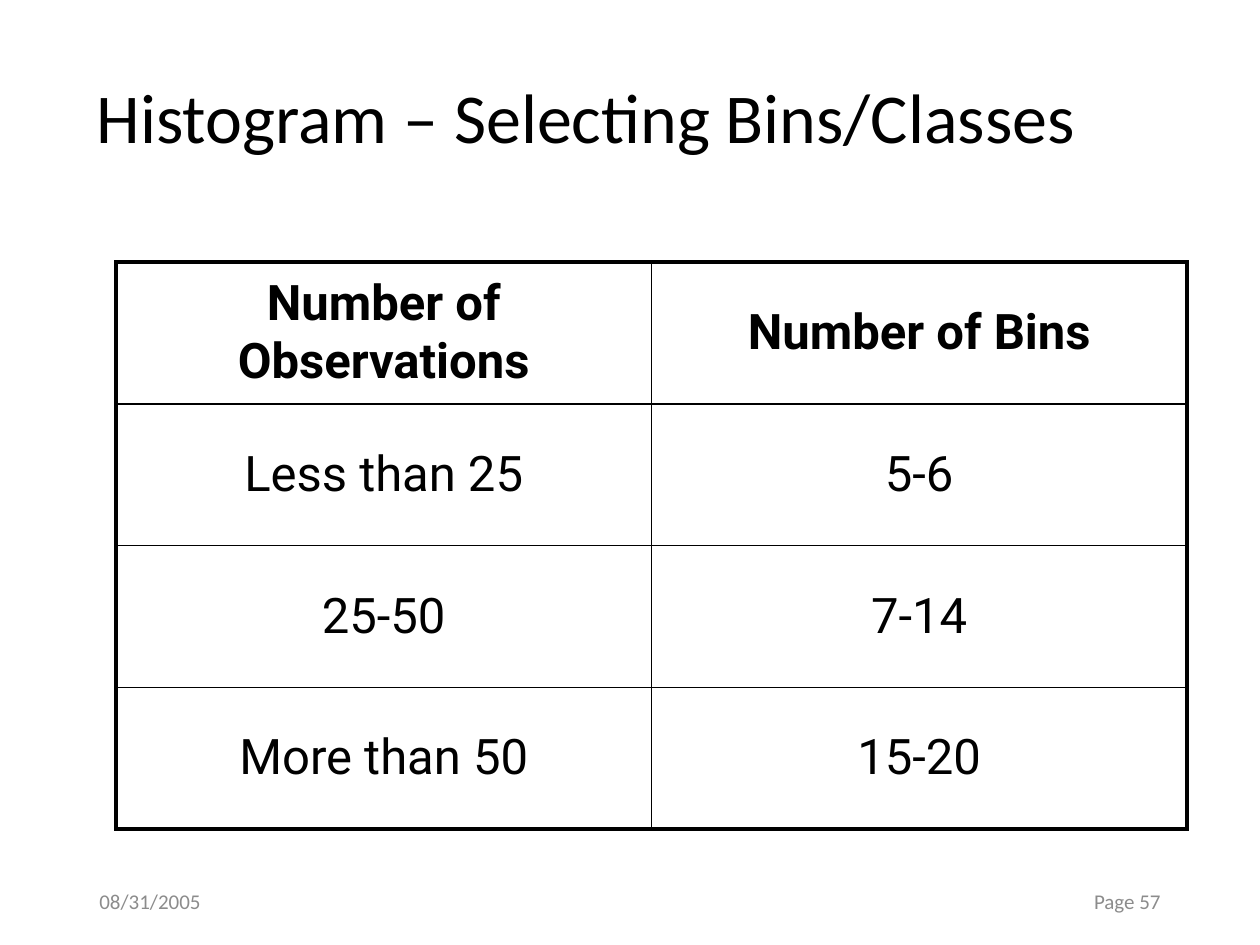
import pptx
import pptx.dml.color
import pptx.enum.text
import pptx.oxml.ns
import pptx.util
from lxml import etree

Inches = pptx.util.Inches
Pt = pptx.util.Pt
RGBColor = pptx.dml.color.RGBColor
PP_ALIGN = pptx.enum.text.PP_ALIGN
MIDDLE = pptx.enum.text.MSO_ANCHOR.MIDDLE
qn = pptx.oxml.ns.qn

BLACK = RGBColor(0x00, 0x00, 0x00)
WHITE = RGBColor(0xFF, 0xFF, 0xFF)
GRAY = RGBColor(0x8C, 0x8C, 0x8C)

TITLE = "Histogram – Selecting Bins/Classes"
DATE = "08/31/2005"
PAGE = "Page 57"
BIN_ROWS = [
    ("Number of Observations", "Number of Bins"),
    ("Less than 25", "5-6"),
    ("25-50", "7-14"),
    ("More than 50", "15-20"),
]
TABLE_BOX = (0.92, 2.08, 8.5, 4.5)
OUTER_LINE, INNER_LINE = 2.25, 1


def add_run(paragraph, text, size, font_name, color, bold=False):
    run = paragraph.add_run()
    run.text = text
    run.font.size = Pt(size)
    run.font.name = font_name
    run.font.color.rgb = color
    run.font.bold = bold


def add_label(slide, text, box, size, color, align=PP_ALIGN.LEFT, line_spacing=1.0):
    frame = slide.shapes.add_textbox(*map(Inches, box)).text_frame
    frame.word_wrap = True
    frame.vertical_anchor = MIDDLE
    paragraph = frame.paragraphs[0]
    paragraph.alignment = align
    paragraph.line_spacing = line_spacing
    add_run(paragraph, text, size, "Calibri", color)


def set_borders(cell, widths):
    """Draw solid black borders; widths maps L, R, T, B to points."""
    properties = cell._tc.get_or_add_tcPr()
    for side, width in widths.items():
        line = etree.SubElement(properties, qn(f"a:ln{side}"), w=str(Pt(width)))
        fill = etree.SubElement(line, qn("a:solidFill"))
        etree.SubElement(fill, qn("a:srgbClr"), val=str(BLACK))


def add_bin_table(slide):
    row_count, column_count = len(BIN_ROWS), len(BIN_ROWS[0])
    frame = slide.shapes.add_table(row_count, column_count, *map(Inches, TABLE_BOX))
    table = frame.table
    table.first_row = False
    table.horz_banding = False
    for row, values in enumerate(BIN_ROWS):
        for column, value in enumerate(values):
            cell = table.cell(row, column)
            on_edge = {
                "L": column == 0,
                "R": column == column_count - 1,
                "T": row == 0,
                "B": row == row_count - 1,
            }
            set_borders(cell, {side: OUTER_LINE if edge else INNER_LINE
                               for side, edge in on_edge.items()})
            cell.fill.solid()
            cell.fill.fore_color.rgb = WHITE
            cell.vertical_anchor = MIDDLE
            paragraph = cell.text_frame.paragraphs[0]
            paragraph.alignment = PP_ALIGN.CENTER
            paragraph.space_before = Pt(5.6)
            add_run(paragraph, value, 28, "Roboto", BLACK, bold=row == 0)


def main():
    presentation = pptx.Presentation()
    presentation.slide_width = Inches(10)
    presentation.slide_height = Inches(7.5)
    slide = presentation.slides.add_slide(presentation.slide_layouts[6])
    add_label(slide, DATE, (0.69, 6.95, 2.25, 0.4), 12, GRAY)
    add_label(slide, PAGE, (7.06, 6.95, 2.25, 0.4), 12, GRAY, PP_ALIGN.RIGHT)
    add_label(slide, TITLE, (0.67, 0.33, 9, 1.25), 40, BLACK, line_spacing=0.9)
    add_bin_table(slide)
    presentation.save("out.pptx")


if __name__ == "__main__":
    main()
